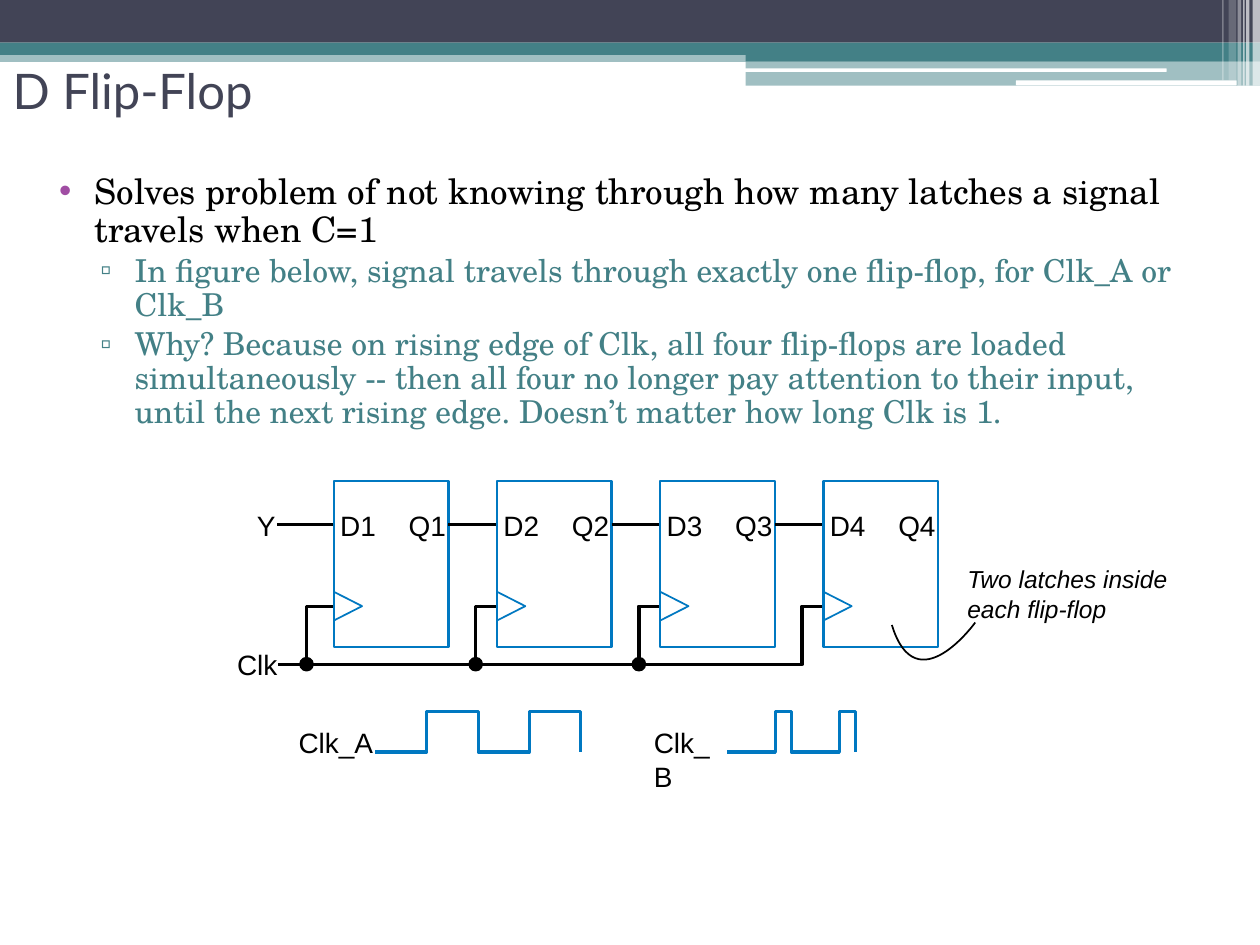
"""Build the D flip-flop slide with its four-stage clocked chain."""
from dataclasses import dataclass

from lxml import etree
from pptx import Presentation
from pptx.dml.color import RGBColor
from pptx.enum.shapes import MSO_CONNECTOR, MSO_SHAPE
from pptx.enum.text import MSO_ANCHOR, MSO_AUTO_SIZE, PP_ALIGN
from pptx.oxml.ns import qn
from pptx.util import Cm, Pt

RECT, ROUNDED, OVAL = MSO_SHAPE.RECTANGLE, MSO_SHAPE.ROUNDED_RECTANGLE, MSO_SHAPE.OVAL
STRAIGHT = MSO_CONNECTOR.STRAIGHT
MIDDLE, TOP = MSO_ANCHOR.MIDDLE, MSO_ANCHOR.TOP
LEFT, NO_FIT = PP_ALIGN.LEFT, MSO_AUTO_SIZE.NONE


@dataclass(frozen=True)
class Theme:
    navy: str = "424456"
    teal: str = "438086"
    purple: str = "A04DA3"
    blue: str = "0078C1"
    black: str = "000000"
    white: str = "FFFFFF"
    title_font: str = "Lato"
    body_font: str = "TeX Gyre Schola"
    label_font: str = "Arial"
    title_size: float = 28
    point_size: float = 20
    detail_size: float = 18
    label_size: float = 16
    note_size: float = 14
    wire: float = 1.88
    outline: float = 1.38
    thin: float = 1


def write(paragraph, text, *, font, size, color, italic=False):
    run = paragraph.add_run()
    run.text = text
    run.font.name, run.font.size, run.font.italic = font, Pt(size), italic
    run.font.color.rgb = RGBColor.from_string(color)
    paragraph.alignment = LEFT


class Diagram:
    def __init__(self, slide, theme):
        self.slide, self.theme = slide, theme

    def place(self, holder, box, anchor):
        holder.left, holder.top, holder.width, holder.height = map(Cm, box)
        frame = holder.text_frame
        frame.auto_size, frame.vertical_anchor, frame.word_wrap = NO_FIT, anchor, True
        return frame

    def title(self, text, box):
        frame = self.place(self.slide.shapes.title, box, MIDDLE)
        write(frame.paragraphs[0], text, font=self.theme.title_font,
              size=self.theme.title_size, color=self.theme.navy)

    def bullets(self, items, box):
        theme = self.theme
        styles = [("•", theme.purple, theme.black, theme.point_size, 1.02, -0.71),
                  ("▫", theme.teal, theme.teal, theme.detail_size, 1.83, -0.69)]
        frame = self.place(self.slide.placeholders[1], box, TOP)
        for index, (level, text) in enumerate(items):
            mark, mark_color, color, size, margin, indent = styles[level]
            paragraph = frame.add_paragraph() if index else frame.paragraphs[0]
            paragraph.level, paragraph.line_spacing = level, 0.9
            paragraph.space_before = Pt(3)
            write(paragraph, text, font=theme.body_font, size=size, color=color)
            properties = paragraph._p.get_or_add_pPr()
            properties.set("marL", str(Cm(margin)))
            properties.set("indent", str(Cm(indent)))
            tint = etree.SubElement(properties, qn("a:buClr"))
            etree.SubElement(tint, qn("a:srgbClr"), val=mark_color)
            etree.SubElement(properties, qn("a:buChar"), char=mark)

    def label(self, text, x, y, width, height=0.75, inset=(0, 0), size=None, italic=False):
        box = self.slide.shapes.add_textbox(*map(Cm, (x, y, width, height)))
        frame = box.text_frame
        frame.word_wrap = True
        frame.margin_left = frame.margin_right = Cm(inset[0])
        frame.margin_top = frame.margin_bottom = Cm(inset[1])
        write(frame.paragraphs[0], text, font=self.theme.label_font,
              size=size or self.theme.label_size, color=self.theme.black, italic=italic)

    def shape(self, kind, box, fill=None, opacity=100, line=None, weight=1):
        shape = self.slide.shapes.add_shape(kind, *map(Cm, box))
        shape.shadow.inherit = False
        if fill:
            shape.fill.solid()
            shape.fill.fore_color.rgb = RGBColor.from_string(fill)
            if opacity < 100:
                tint = shape._element.spPr.find(qn("a:solidFill"))[0]
                etree.SubElement(tint, qn("a:alpha"), val=str(opacity * 1000))
        else:
            shape.fill.background()
        self.stroke(shape, line, weight)

    def stroke(self, shape, color, weight):
        if color:
            shape.line.color.rgb = RGBColor.from_string(color)
            shape.line.width = Pt(weight)
        else:
            shape.line.fill.background()

    def wire(self, x1, x2, y):
        wire = self.slide.shapes.add_connector(STRAIGHT, *map(Cm, (x1, y, x2, y)))
        self.stroke(wire, self.theme.black, self.theme.wire)
        etree.SubElement(wire._element.spPr, qn("a:effectLst"))

    def trace(self, points, color, weight):
        start, *rest = [(Cm(x), Cm(y)) for x, y in points]
        builder = self.slide.shapes.build_freeform(*start)
        builder.add_line_segments(rest, close=False)
        trace = builder.convert_to_shape()
        trace.shadow.inherit = False
        trace.fill.background()
        self.stroke(trace, color, weight)
        return trace

    def curve(self, points, color, weight):
        segments = list(self.trace(points, color, weight)._element.iter(qn("a:lnTo")))
        outline = segments[0].getparent()
        bezier = etree.SubElement(outline, qn("a:cubicBezTo"))
        for segment in segments:
            bezier.append(segment[0])
            outline.remove(segment)


def draw_header(diagram):
    theme = diagram.theme
    for box, color, opacity in [((0, 1.02, 25.4, 0.23), theme.teal, 50),
                                ((0, 0, 25.4, 0.86), theme.navy, 100),
                                ((0, 0.86, 25.4, 0.25), theme.teal, 100),
                                ((15.03, 1, 10.37, 0.23), theme.teal, 100),
                                ((15.03, 1.23, 10.37, 0.5), theme.teal, 50)]:
        diagram.shape(RECT, box, color, opacity)
    for box in [(15.01, 1.38, 8.51, 0.07), (20.48, 1.62, 4.45, 0.1)]:
        diagram.shape(ROUNDED, box, theme.white)
    for x, width, height, opacity in [(25.25, 0.15, 1.73, 65), (25.12, 0.07, 1.73, 65),
                                      (25.06, 0.03, 1.73, 60), (24.95, 0.07, 1.73, 40),
                                      (24.77, 0.15, 1.62, 20), (24.64, 0.03, 1.62, 30)]:
        diagram.shape(RECT, (x, 0, width, height), theme.white, opacity)


def draw_chain(diagram):
    theme = diagram.theme
    count, pitch, width, top, height = 4, 3.29, 2.31, 9.7, 3.35
    data_y, clock_y, bus_y, bus_start = 10.57, 12.22, 13.39, 5.61
    lefts = [6.73 + pitch * stage for stage in range(count)]
    for stage, left in enumerate(lefts, 1):
        tap = left - (0.55 if stage == 1 else 0.43)
        diagram.wire(5.59 if stage == 1 else left - pitch + width, left, data_y)
        clock_route = [(left, clock_y), (tap, clock_y), (tap, bus_y)]
        if stage == count:
            clock_route.append((bus_start, bus_y))
        else:
            diagram.shape(OVAL, (tap - 0.13, bus_y - 0.13, 0.26, 0.26), theme.black,
                          line=theme.black, weight=theme.thin)
        diagram.trace(clock_route, theme.black, theme.wire)
        diagram.label(f"D{stage}", left + 0.13, 10.26, 0.99)
        diagram.label(f"Q{stage}", left + 1.51, 10.26, 1.02)
        diagram.trace([(left, clock_y + 0.29), (left + 0.57, clock_y), (left, clock_y - 0.29)],
                      theme.blue, theme.thin)
        diagram.shape(RECT, (left, top, width, height), line=theme.blue, weight=theme.outline)
    diagram.label("Y", 5.18, 10.26, 0.61)
    diagram.label("Clk", 4.78, 13.06, 0.9)
    diagram.curve([(19.66, 12.55), (19.66, 12.55), (18.47, 14.2), (17.98, 12.6)],
                  theme.black, theme.thin)
    diagram.label("Two latches inside each flip-flop", 19.25, 11.25, 4.88, 1.45,
                  inset=(0.25, 0.13), size=theme.note_size, italic=True)


def draw_clocks(diagram):
    low_y, high_y = 15.16, 14.35
    for name, label_x, label_width, x, low, high in [("Clk_A", 6.02, 1.6, 7.57, 1.03, 1.04),
                                                     ("Clk_B", 13.18, 1.4, 14.66, 0.97, 0.32)]:
        diagram.label(name, label_x, 14.63, label_width)
        signal = [(x, low_y)]
        for _ in range(2):
            rise, fall = x + low, x + low + high
            signal += [(rise, low_y), (rise, high_y), (fall, high_y), (fall, low_y)]
            x = fall
        diagram.trace(signal, diagram.theme.blue, diagram.theme.wire)


def main():
    deck = Presentation()
    deck.slide_width, deck.slide_height = Cm(25.4), Cm(19.05)
    diagram = Diagram(deck.slides.add_slide(deck.slide_layouts[1]), Theme())
    draw_header(diagram)
    diagram.title("D Flip-Flop", (0, 1.12, 22.86, 1.4))
    diagram.bullets([
        (0, "Solves problem of not knowing through how many latches a signal travels when C=1"),
        (1, "In figure below, signal travels through exactly one flip-flop, for Clk_A or Clk_B"),
        (1, "Why? Because on rising edge of Clk, all four flip-flops are loaded simultaneously "
            "-- then all four no longer pay attention to their input, until the next rising "
            "edge. Doesn’t matter how long Clk is 1."),
    ], (0.63, 3.38, 23.93, 5.61))
    draw_chain(diagram)
    draw_clocks(diagram)
    deck.save("out.pptx")


if __name__ == "__main__":
    main()
